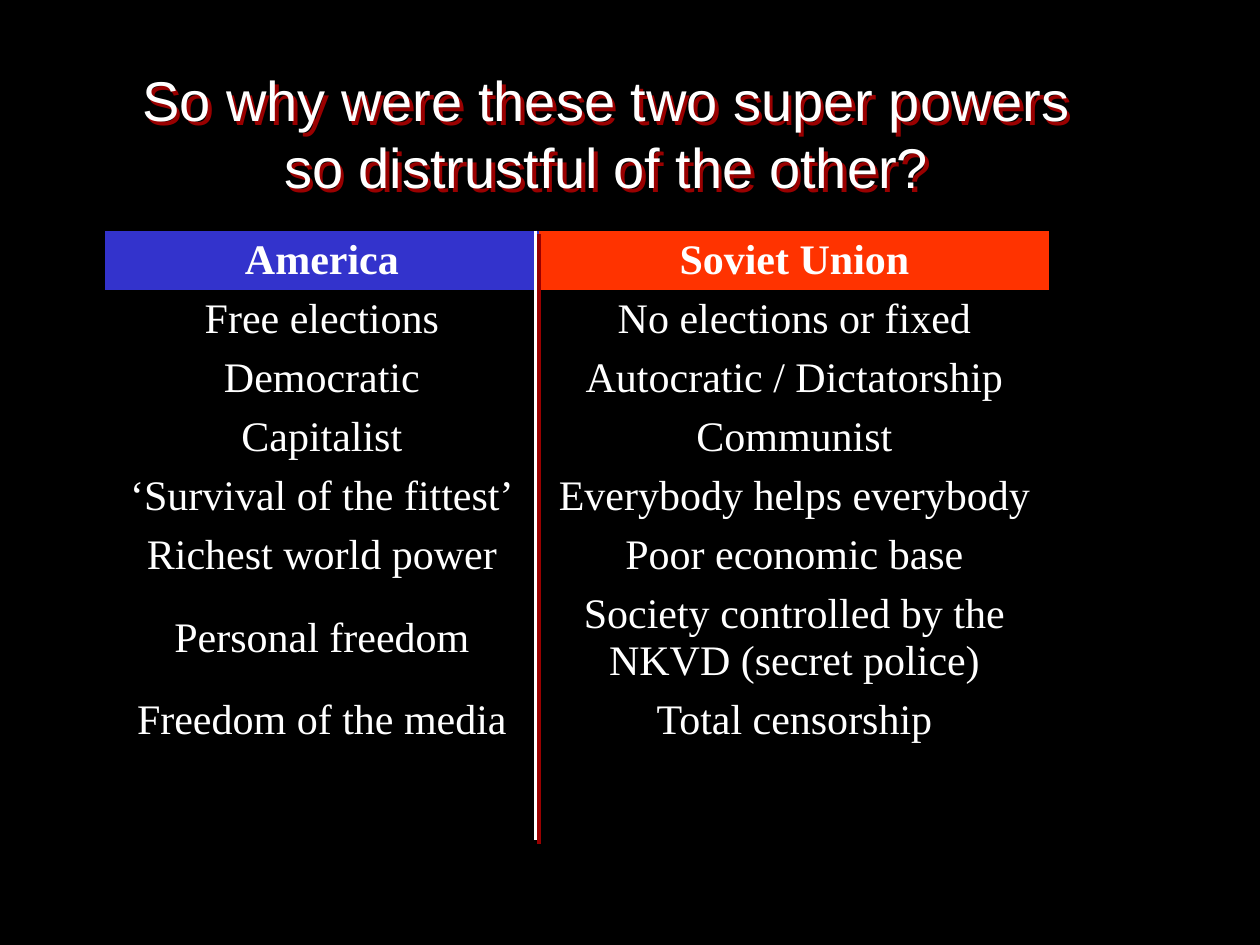
"""Build a slide comparing America and the Soviet Union in a two-column table."""
from lxml.etree import SubElement
from pptx import Presentation
from pptx.dml.color import RGBColor as RGB
from pptx.enum.shapes import MSO_CONNECTOR as CONN
from pptx.enum.text import MSO_ANCHOR as ANCHOR, PP_ALIGN as ALIGN
from pptx.oxml import parse_xml
from pptx.oxml.ns import nsdecls, qn
from pptx.util import Inches, Pt

THEME = {
    "back": "000000", "text": "FFFFFF", "shadow": "990000",
    "headers": ("3333CC", "FF3300"),
    "title": {"name": "Arial", "size": Pt(32)},
    "body": {"name": "Times New Roman", "size": Pt(24)},
}
ROWS = [
    ("America", "Soviet Union"),
    ("Free elections", "No elections or fixed"),
    ("Democratic", "Autocratic / Dictatorship"),
    ("Capitalist", "Communist"),
    ("‘Survival of the fittest’", "Everybody helps everybody"),
    ("Richest world power", "Poor economic base"),
    ("Personal freedom", "Society controlled by the NKVD (secret police)"),
    ("Freedom of the media", "Total censorship"),
]
COLS = (3.45, 4.05)
ROW_H, TALL_ROW, TALL_H = 0.41, 6, 0.75
LEFT, TOP = 0.83, 1.83


def style(p, font, bold=False):
    p.alignment = ALIGN.CENTER
    for key, value in {**THEME[font], "bold": bold}.items():
        setattr(p.font, key, value)
    p.font.color.rgb = RGB.from_string(THEME["text"])


def add_shadow(s):
    s._element.spPr.append(parse_xml(
        f'<a:effectLst {nsdecls("a")}><a:outerShdw dist="{Pt(2.8)}" dir="2700000" algn="ctr" rotWithShape="0">'
        f'<a:srgbClr val="{THEME["shadow"]}"/></a:outerShdw></a:effectLst>'))


prs = Presentation()
prs.slide_width, prs.slide_height = Inches(10), Inches(7.5)
slide = prs.slides.add_slide(prs.slide_layouts[6])
slide.background.fill.solid()
slide.background.fill.fore_color.rgb = RGB.from_string(THEME["back"])

frame = slide.shapes.add_table(len(ROWS), len(COLS), Inches(LEFT), Inches(TOP),
                               Inches(sum(COLS)), Inches(ROW_H * len(ROWS)))
table = frame.table
table.first_row = table.horz_banding = False
table._tbl.tblPr.find(qn("a:tableStyleId")).text = "{2D5ABB26-0587-4C30-8999-92F81FD0307C}"
for c, width in enumerate(COLS):
    table.columns[c].width = Inches(width)
for r, row in enumerate(ROWS):
    table.rows[r].height = Inches(TALL_H if r == TALL_ROW else ROW_H)
    for c, words in enumerate(row):
        cell = table.cell(r, c)
        cell.text = words
        cell.vertical_anchor = ANCHOR.MIDDLE
        for side in ("left", "right", "top", "bottom"):
            setattr(cell, f"margin_{side}", Inches(0.05))
        style(cell.text_frame.paragraphs[0], "body", bold=r == 0)
        edges = {"lnL": c == 0, "lnR": c == len(COLS) - 1, "lnT": r == 0, "lnB": r == len(ROWS) - 1}
        for tag, outer in edges.items():
            if outer:
                ln = SubElement(cell._tc.get_or_add_tcPr(), qn(f"a:{tag}"), w=str(Pt(0.75)))
                SubElement(SubElement(ln, qn("a:solidFill")), qn("a:srgbClr"), val=THEME["back"])
        if r == 0:
            cell.fill.solid()
            cell.fill.fore_color.rgb = RGB.from_string(THEME["headers"][c])
        else:
            cell.fill.background()

title = slide.shapes.add_textbox(Inches(0.94), Inches(0.42), Inches(7.75), Inches(1.58))
title.fill.background()
add_shadow(title)
tf = title.text_frame
for key, value in {"word_wrap": False, "vertical_anchor": ANCHOR.TOP, "margin_top": Inches(0.1)}.items():
    setattr(tf, key, value)
tf.paragraphs[0].text = "So why were these two super powers\vso distrustful of the other?"
style(tf.paragraphs[0], "title")

divider = slide.shapes.add_connector(CONN.STRAIGHT, Inches(4.25), Inches(TOP), Inches(4.25), Inches(6.67))
divider.line.width = Pt(2.25)
divider.line.color.rgb = RGB.from_string(THEME["text"])
add_shadow(divider)

prs.save("out.pptx")
